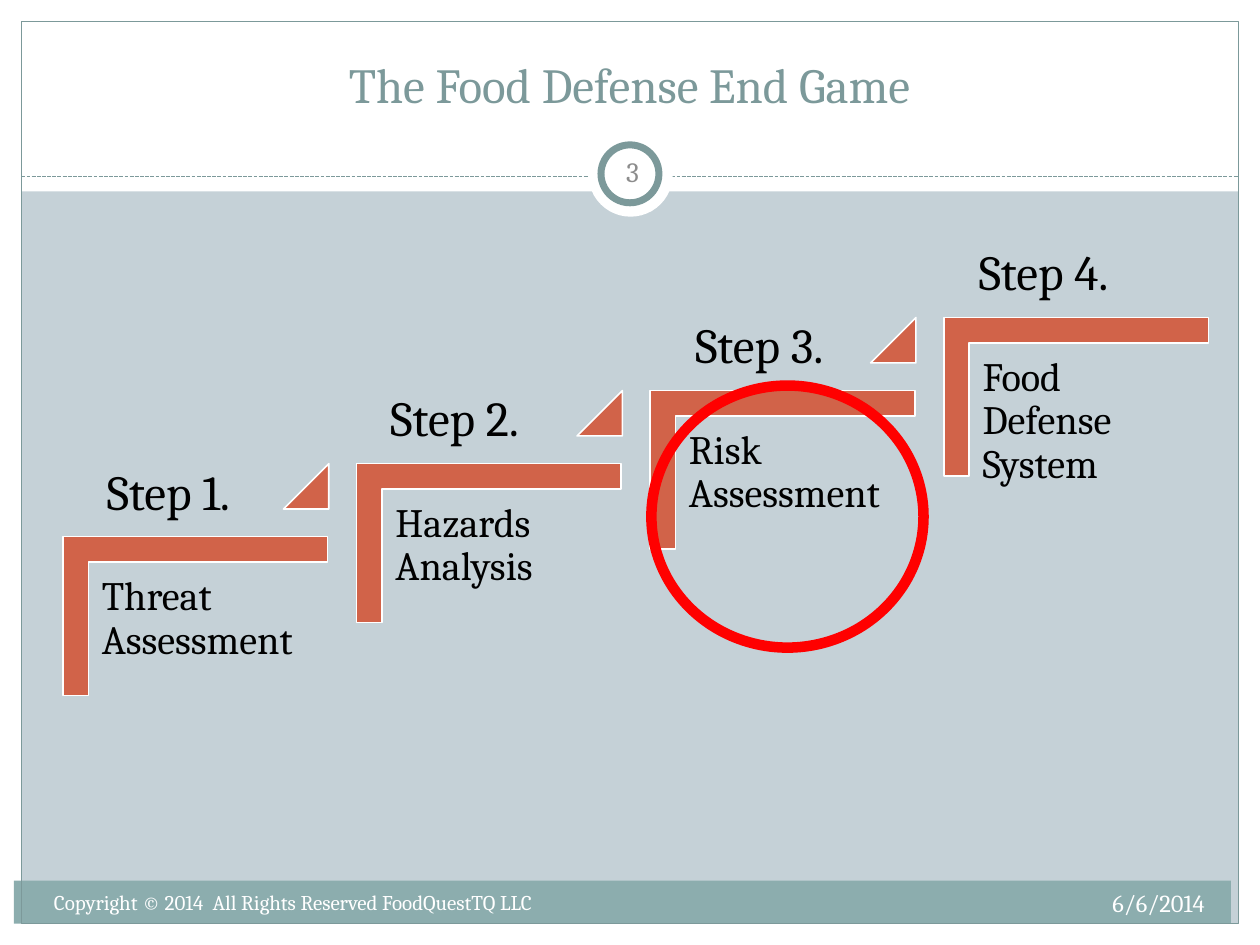
from typing import NamedTuple, Optional

from lxml import etree
from pptx import Presentation
from pptx.dml.color import RGBColor
from pptx.enum.dml import MSO_LINE
from pptx.enum.shapes import MSO_CONNECTOR, MSO_SHAPE as Preset
from pptx.enum.text import MSO_ANCHOR as Anchor, PP_ALIGN as Align
from pptx.oxml.ns import qn
from pptx.util import Inches, Pt

FONT = "Cambria"
WHITE, BLACK, RED = "FFFFFF", "000000", "FF0000"
SLATE, TEAL, RUST, MIST, GRAY = "7C999A", "8CADAE", "D16349", "C5D1D7", "8C8C8C"


class Area(NamedTuple):
    left: float
    top: float
    width: float
    height: float

    def lengths(self) -> list:
        return [Inches(value) for value in self]


class Step(NamedTuple):
    label: str
    label_left: float
    label_width: float
    name: str


STEPS = [
    Step("Step 1.", 0.75, 1.34, "Threat Assessment"),
    Step("Step 2.", 3.0, 1.39, "Hazards Analysis"),
    Step("Step 3.", 5.42, 1.39, "Risk Assessment"),
    Step("Step 4.", 7.67, 1.39, "Food Defense System"),
]
STEP_RUN, STEP_RISE = 2.33, 0.58


def color(value: str) -> RGBColor:
    return RGBColor.from_string(value)


def add_figure(page, preset, area: Area, fill: Optional[str] = None,
               line: Optional[str] = None, weight: float = 0.75):
    shape = page.shapes.add_shape(preset, *area.lengths())
    shape.shadow.inherit = False
    if fill:
        shape.fill.solid()
        shape.fill.fore_color.rgb = color(fill)
    else:
        shape.fill.background()
    if line:
        shape.line.color.rgb = color(line)
        shape.line.width = Pt(weight)
    else:
        shape.line.fill.background()
    return shape


def add_text(page, text: str, area: Area, size: float, ink: str,
             align=Align.LEFT, anchor=Anchor.TOP, wrap: bool = True,
             inset: Optional[float] = None, spacing: Optional[float] = None):
    box = page.shapes.add_textbox(*area.lengths())
    frame = box.text_frame
    frame.word_wrap = wrap
    frame.vertical_anchor = anchor
    if inset is not None:
        frame.margin_left = frame.margin_right = Inches(inset)
        frame.margin_top = frame.margin_bottom = Inches(inset)
    para = frame.paragraphs[0]
    para.alignment = align
    if spacing:
        para.line_spacing = spacing
    span = para.add_run()
    span.text = text
    span.font.name = FONT
    span.font.size = Pt(size)
    span.font.color.rgb = color(ink)


def add_frame(page) -> None:
    # White margins and header band
    for area in (Area(0, 7.33, 10, 0.17), Area(0, 0, 10, 1.52),
                 Area(0, 0, 0.17, 7.5), Area(9.83, 0, 0.17, 7.5)):
        add_figure(page, Preset.RECTANGLE, area, WHITE)
    # Footer band and border
    add_figure(page, Preset.RECTANGLE, Area(0.11, 6.99, 9.66, 0.34), TEAL)
    add_figure(page, Preset.RECTANGLE, Area(0.17, 0.17, 9.66, 7.16), line=SLATE)
    # Dashed rule
    rule = page.shapes.add_connector(
        MSO_CONNECTOR.STRAIGHT, Inches(0.17), Inches(1.4), Inches(9.83), Inches(1.4))
    rule.line.color.rgb = color(SLATE)
    rule.line.width = Pt(0.75)
    rule.line.dash_style = MSO_LINE.SQUARE_DOT
    etree.SubElement(rule._element.spPr, qn("a:effectLst"))
    # Page number ring
    add_figure(page, Preset.OVAL, Area(4.67, 1.05, 0.67, 0.67), WHITE)
    add_figure(page, Preset.OVAL, Area(4.77, 1.15, 0.46, 0.46), WHITE, SLATE, 4)


def add_stair(page, step: Step, index: int) -> None:
    across, up = index * STEP_RUN, index * STEP_RISE
    corner = add_figure(page, Preset.CORNER, Area(0.92 + across, 3.84 - up, 1.26, 2.1),
                        RUST, WHITE, 0.9)
    corner.rotation = 90
    corner.adjustments[0] = corner.adjustments[1] = 0.16
    add_text(page, step.name, Area(0.71 + across, 4.47 - up, 1.9, 1.66), 23, BLACK,
             inset=0.1, spacing=0.9)
    if index < len(STEPS) - 1:
        marker = add_figure(page, Preset.ISOSCELES_TRIANGLE,
                            Area(2.25 + across, 3.68 - up, 0.36, 0.36), RUST, WHITE, 0.9)
        marker.adjustments[0] = 1


def main() -> None:
    deck = Presentation()
    deck.slide_width, deck.slide_height = Inches(10), Inches(7.5)
    page = deck.slides.add_slide(deck.slide_layouts[6])
    page.background.fill.solid()
    page.background.fill.fore_color.rgb = color(MIST)

    add_frame(page)
    add_text(page, "The Food Defense End Game", Area(0.33, 0.25, 9.33, 0.83), 28, SLATE,
             Align.CENTER, Anchor.MIDDLE)

    # Staircase, highlight ring and step labels
    for index, step in enumerate(STEPS):
        add_stair(page, step, index)
    add_figure(page, Preset.OVAL, Area(5.17, 3.06, 2.16, 2.08), line=RED, weight=6)
    for index, step in enumerate(STEPS):
        area = Area(step.label_left, 3.61 - index * STEP_RISE, step.label_width, 0.57)
        add_text(page, step.label, area, 28, BLACK, wrap=False)

    # Footer and page number
    add_text(page, "6/6/2014", Area(6.33, 7, 3.33, 0.4), 14, WHITE, Align.RIGHT)
    add_text(page, "Copyright © 2014  All Rights Reserved FoodQuestTQ LLC",
             Area(0.33, 7.01, 4.61, 0.4), 12, WHITE)
    add_text(page, "3", Area(4.77, 1.12, 0.5, 0.48), 16, GRAY,
             Align.CENTER, Anchor.MIDDLE, inset=0.05)

    deck.save("out.pptx")


if __name__ == "__main__":
    main()
